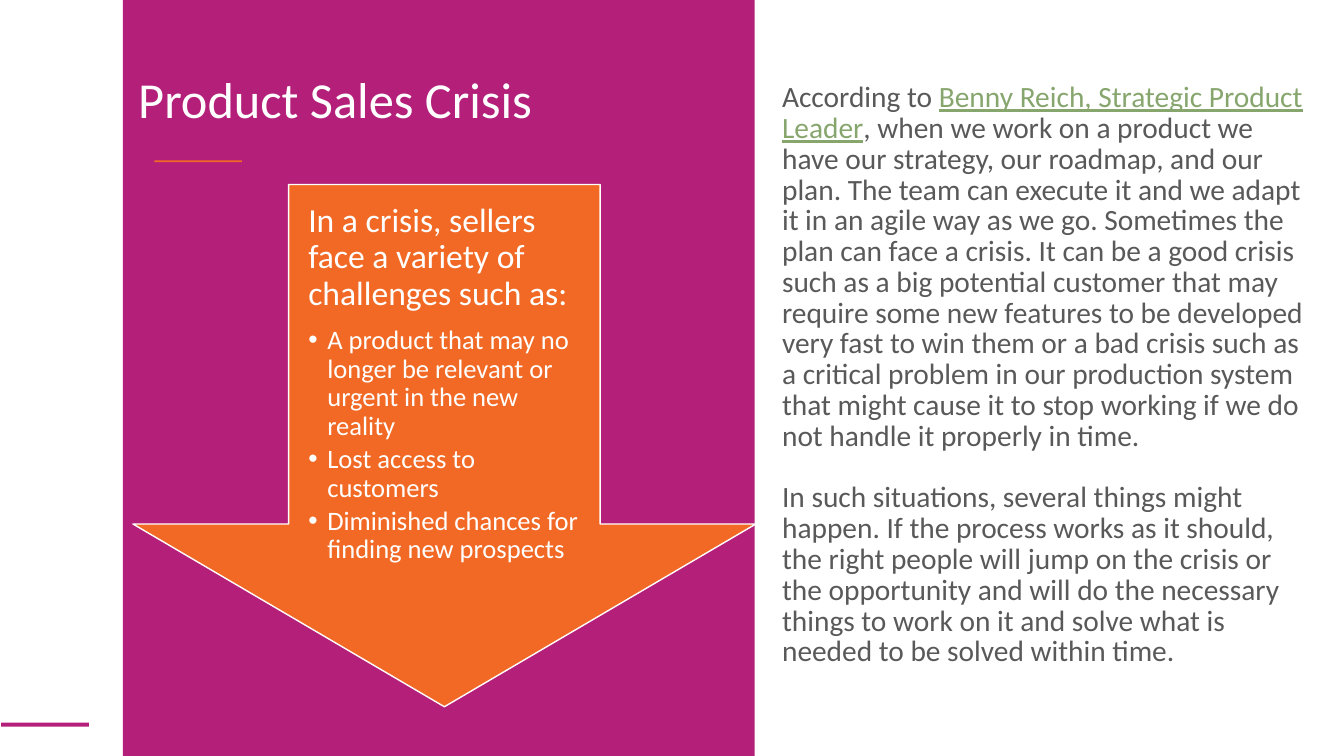
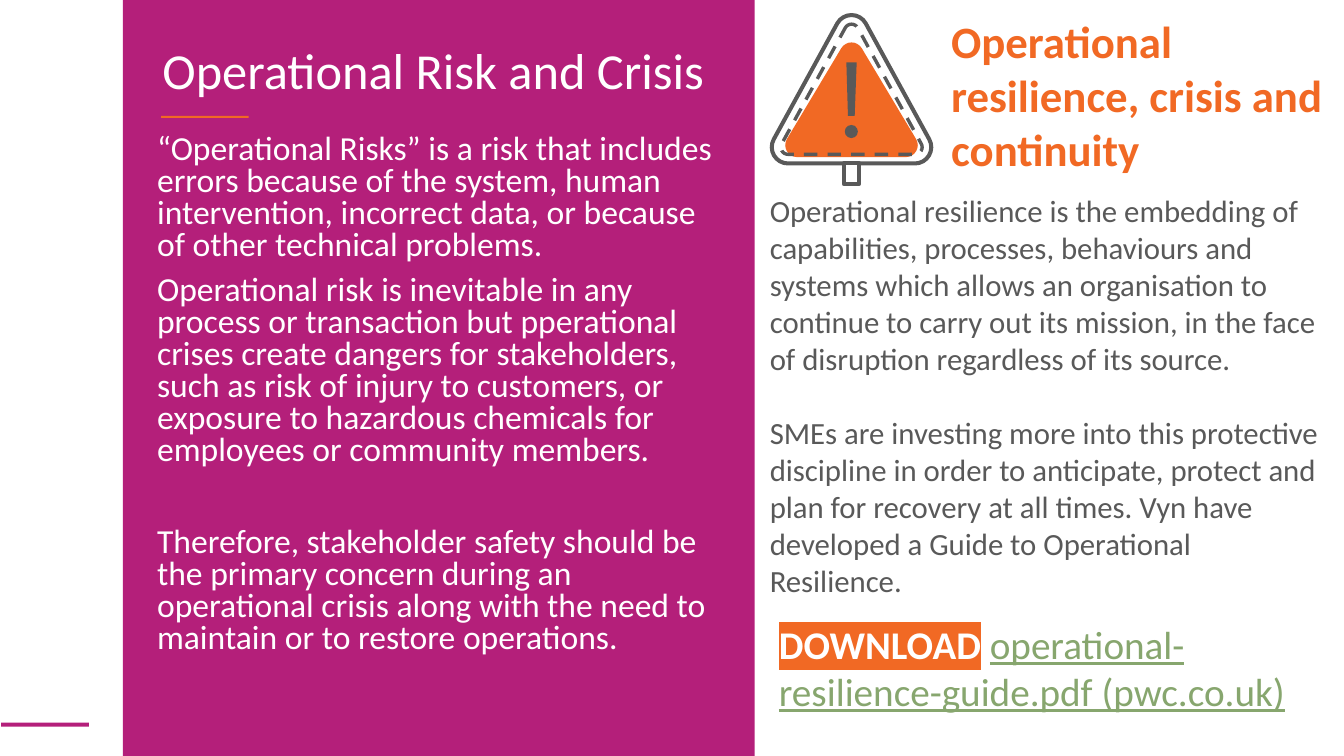
from math import atan2, cos, pi, sin

from lxml.etree import SubElement
from pptx import Presentation
from pptx.dml.color import RGBColor
from pptx.enum.dml import MSO_LINE as Dash
from pptx.enum.shapes import MSO_SHAPE as Kind
from pptx.enum.text import MSO_ANCHOR as Anchor
from pptx.enum.text import MSO_AUTO_SIZE as Fit
from pptx.enum.text import PP_ALIGN as Align
from pptx.oxml.ns import qn
from pptx.util import Cm, Pt

COLORS = {
    "brand": "B41F7A",
    "accent": "F16924",
    "text": "595959",
    "link": "87A66E",
    "white": "FFFFFF",
}
FONT = "Calibri"


def tint(name):
    return RGBColor.from_string(COLORS[name])


class Deck:
    """House style plus the slide being filled."""

    def __init__(self):
        self.file = Presentation()
        self.file.slide_width, self.file.slide_height = Cm(33.87), Cm(19.05)
        self.layout = self.file.slide_layouts[5]
        self.page = None

    def brand(self):
        """Put the shared bands on the layout, behind its title."""
        for spot in list(self.layout.placeholders):
            if spot.placeholder_format.idx:
                spot.element.getparent().remove(spot.element)
        bands = [(3.1, 0, 15.92, 19.05), (0.03, 18.21, 2.21, 0.1)]
        for place, box in enumerate(bands, 2):
            band = self.shape(Kind.RECTANGLE, box, "brand")
            self.layout.shapes.element.insert(place, band.element)

    def slide(self, title, box, lead, rule):
        first = self.page is None
        self.page = self.file.slides.add_slide(self.layout)
        if first:
            self.brand()
        head = self.page.shapes.title
        head.left, head.top, head.width, head.height = map(Cm, box)
        frame = self.setup(head.text_frame)
        self.para(frame, title, 36, "white", lead=lead)
        self.shape(Kind.RECTANGLE, (*rule, 2.21, 0.05), "accent")

    def paint(self, shape, fill, line=None, width=1.0, dash=None):
        shape.shadow.inherit = False
        if fill:
            shape.fill.solid()
            shape.fill.fore_color.rgb = tint(fill)
        else:
            shape.fill.background()
        if line:
            shape.line.color.rgb = tint(line)
            shape.line.width = Pt(width)
            if dash:
                shape.line.dash_style = dash
        else:
            shape.line.fill.background()
        return shape

    def shape(self, kind, box, fill, line=None, width=1.0):
        made = self.page.shapes.add_shape(kind, *map(Cm, box))
        return self.paint(made, fill, line, width)

    def outline(self, points, fill, line=None, width=1.0, dash=None):
        dots = [(Cm(x), Cm(y)) for x, y in points]
        path = self.page.shapes.build_freeform(*dots[0])
        path.add_line_segments(dots[1:], close=True)
        return self.paint(path.convert_to_shape(), fill, line, width, dash)

    def setup(self, frame, anchor=Anchor.TOP, inset=None):
        frame.word_wrap = True
        frame.auto_size = Fit.NONE
        frame.vertical_anchor = anchor
        if inset:
            frame.margin_left = frame.margin_right = Cm(inset)
            frame.margin_top = frame.margin_bottom = Cm(inset)
        return frame

    def text(self, box, inset=None):
        made = self.page.shapes.add_textbox(*map(Cm, box))
        return self.setup(made.text_frame, inset=inset)

    def para(self, frame, runs, size, color, lead=1.0, before=0, after=0,
             bold=False, bullet=False):
        """Add a paragraph; runs is a string or (text, style) pairs."""
        para = frame.add_paragraph() if frame.text else frame.paragraphs[0]
        para.alignment = Align.LEFT
        para.line_spacing = lead
        para.space_before, para.space_after = Pt(before), Pt(after)
        if bullet:
            props = para._p.get_or_add_pPr()
            props.set("marL", str(Cm(0.48)))
            props.set("indent", str(-Cm(0.48)))
            SubElement(props, qn("a:buFont"), typeface="Arial")
            SubElement(props, qn("a:buChar"), char="•")
        font = para.font
        font.name, font.size, font.bold = FONT, Pt(size), bold
        font.color.rgb = tint(color)
        for words, style in [(runs, None)] if isinstance(runs, str) else runs:
            run = para.add_run()
            run.text = words
            if style == "link":
                run.font.color.rgb = tint("link")
                run.font.underline = True
            elif style == "tag":
                run.font.color.rgb = tint("white")
                run.font.bold = True
                mark = SubElement(run.font._element, qn("a:highlight"))
                SubElement(mark, qn("a:srgbClr"), val=COLORS["accent"])


def wedge(x, y, half, height, radius, steps=8):
    """Triangle with round corners; x, y is the centre of its top arc."""
    lean = atan2(half, height)
    arcs = [
        (x, y, lean - pi, -lean),
        (x + half, y + height, -lean, pi / 2),
        (x - half, y + height, pi / 2, pi + lean),
    ]
    points = []
    for mid, low, start, end in arcs:
        for step in range(steps + 1):
            turn = start + (end - start) * step / steps
            points.append((mid + radius * cos(turn), low + radius * sin(turn)))
    return points


def sales(deck):
    deck.slide("Product Sales Crisis", (3.23, 1.88, 13.69, 1.63), 0.8,
               (3.89, 4.04))

    # Story on the right
    story = deck.text((19.46, 1.96, 13.69, 15.14))
    deck.para(story, [
        ("According to ", None),
        ("Benny Reich, Strategic Product Leader", "link"),
        (", when we work on a product we have our strategy, our roadmap, and "
         "our plan. The team can execute it and we adapt it in an agile way "
         "as we go. Sometimes the plan can face a crisis. It can be a good "
         "crisis such as a big potential customer that may require some new "
         "features to be developed very fast to win them or a bad crisis such "
         "as a critical problem in our production system that might cause it "
         "to stop working if we do not handle it properly in time.", None),
    ], 21, "text", Pt(22))
    deck.para(story, "In such situations, several things might happen. If the "
              "process works as it should, the right people will jump on the "
              "crisis or the opportunity and will do the necessary things to "
              "work on it and solve what is needed to be solved within time.",
              21, "text", Pt(22), before=22)

    # Arrow with the challenges
    arrow = deck.shape(Kind.DOWN_ARROW, (3.35, 4.65, 15.7, 13.16), "accent",
                       "white")
    arrow.adjustments[0], arrow.adjustments[1] = 0.5, 0.35
    tasks = deck.text((7.29, 4.65, 7.85, 10.87), 0.48)
    deck.para(tasks, "In a crisis, sellers face a variety of challenges such "
              "as:", 24, "white", 0.9, after=10)
    for task in (
        "A product that may no longer be relevant or urgent in the new reality",
        "Lost access to customers",
        "Diminished chances for finding new prospects",
    ):
        deck.para(tasks, task, 19, "white", 0.9, after=3, bullet=True)


def sign(deck):
    deck.outline(wedge(21.46, 1.37, 1.37, 2.29, 0.3), "accent")
    for radius, width, dash in ((0.41, 2.9, None), (0.18, 2.4, Dash.DASH)):
        deck.outline(wedge(21.46, 0.79, 1.6, 2.92, radius), None, "text",
                     width, dash)
    bar = [(21.33, 1.57), (21.59, 1.57), (21.54, 2.92), (21.37, 2.92)]
    deck.outline(bar, "text")
    deck.shape(Kind.OVAL, (21.29, 3.15, 0.33, 0.33), "text")
    deck.shape(Kind.RECTANGLE, (21.27, 4.11, 0.38, 0.53), "white", "text", 2.9)


def risk(deck):
    deck.slide("Operational Risk and Crisis", (3.84, 1.04, 14.71, 3.84), 0.9,
               (4.06, 2.92))

    # Definition on the band
    body = deck.text((3.71, 3.28, 14.71, 14.81))
    for words, before in (
        ("“Operational Risks” is a risk that includes errors because of the "
         "system, human intervention, incorrect data, or because of other "
         "technical problems.", 0),
        ("Operational risk is inevitable in any process or transaction but "
         "pperational crises create dangers for stakeholders, such as risk of "
         "injury to customers, or exposure to hazardous chemicals for "
         "employees or community members.", 10),
        ("Therefore, stakeholder safety should be the primary concern during "
         "an operational crisis along with the need to maintain or to restore "
         "operations.", 42.8),
    ):
        deck.para(body, words, 24, "white", Pt(22.8), before)

    # Warning sign and heading
    sign(deck)
    head = deck.text((23.72, 0.23, 10.01, 5.18))
    deck.para(head, "Operational resilience, crisis and continuity", 32,
              "accent", bold=True)

    # Resilience text
    note = deck.text((19.15, 4.7, 14.4, 11.53))
    for words, before in (
        ("Operational resilience is the embedding of capabilities, processes, "
         "behaviours and systems which allows an organisation to continue to "
         "carry out its mission, in the face of disruption regardless of its "
         "source.", 0),
        ("SMEs are investing more into this protective discipline in order to "
         "anticipate, protect and plan for recovery at all times. Vyn have "
         "developed a Guide to Operational Resilience.", 26.8),
    ):
        deck.para(note, words, 22, "text", before=before)

    # Download line
    panel = deck.shape(Kind.RECTANGLE, (19.38, 15.27, 13.72, 3.1), "white")
    frame = deck.setup(panel.text_frame, Anchor.MIDDLE)
    deck.para(frame, [
        ("DOWNLOAD", "tag"),
        (" ", None),
        ("operational-resilience-guide.pdf (pwc.co.uk)", "link"),
    ], 28, "text")


def main():
    deck = Deck()
    sales(deck)
    risk(deck)
    deck.file.save("out.pptx")


if __name__ == "__main__":
    main()
